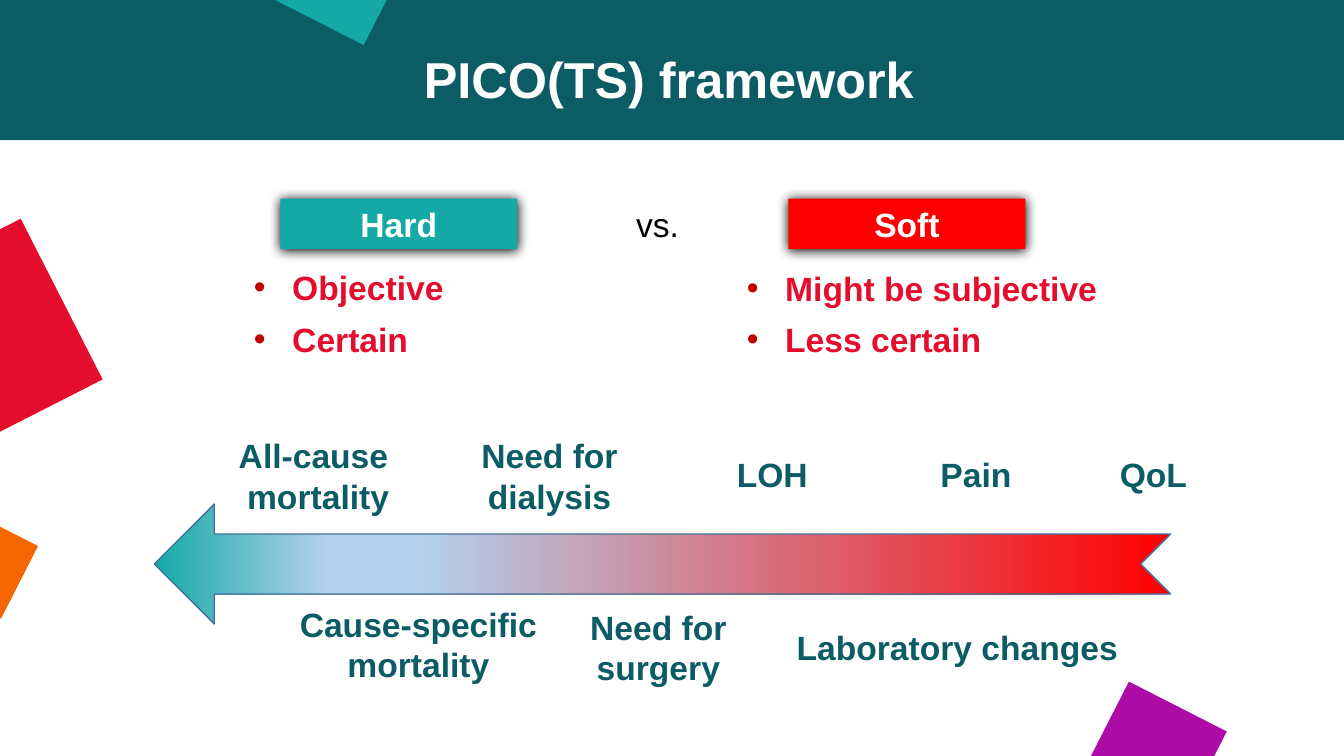
"""Build the PICO(TS) framework slide comparing hard and soft outcomes."""
from lxml import etree
from pptx import Presentation
from pptx.dml.color import RGBColor
from pptx.enum.shapes import MSO_SHAPE
from pptx.enum.text import MSO_ANCHOR, PP_ALIGN
from pptx.oxml.ns import qn
from pptx.util import Inches, Pt

RECT, ARROW = MSO_SHAPE.RECTANGLE, MSO_SHAPE.NOTCHED_RIGHT_ARROW
LEFT, CENTER = PP_ALIGN.LEFT, PP_ALIGN.CENTER
MIDDLE = MSO_ANCHOR.MIDDLE
DARK, TEAL, CRIMSON, RED, WHITE = "0C5C65", "15A9A6", "E50D2E", "FF0000", "FFFFFF"


def rgb(color):
    return RGBColor.from_string(color)


def write(s, text, color, size=24, bold=True, align=CENTER, bullet=False):
    tf = s.text_frame
    tf.word_wrap = True
    tf.text = text
    p = tf.paragraphs[0]
    p.alignment = align
    if bullet:
        pPr = p._p.get_or_add_pPr()
        pPr.set("marL", str(Inches(0.38)))
        pPr.set("indent", str(-Inches(0.38)))
        buClr = etree.SubElement(pPr, qn("a:buClr"))
        etree.SubElement(buClr, qn("a:srgbClr"), val="C00000")
        etree.SubElement(pPr, qn("a:buFont"), typeface="Arial")
        etree.SubElement(pPr, qn("a:buChar"), char="•")
    for r in p.runs:
        r.font.name, r.font.size, r.font.bold = "Arial", Pt(size), bold
        r.font.color.rgb = rgb(color)
    return p


prs = Presentation()
prs.slide_width, prs.slide_height = Inches(13.33), Inches(7.5)
slide = prs.slides.add_slide(prs.slide_layouts[6])
shapes = slide.shapes

decorations = [
    (0, 0, 13.33, 1.39, 0, DARK),
    (-1.09, 2.48, 1.8, 1.79, 333, CRIMSON),
    (10.89, 6.95, 1.09, 1.09, 27, "AD0DA6"),
    (-0.61, 5.18, 0.85, 0.81, 27, "F56600"),
    (2.91, -0.73, 0.98, 1.01, 27, TEAL),
]
for x, y, w, h, angle, color in decorations:
    s = shapes.add_shape(RECT, Inches(x), Inches(y), Inches(w), Inches(h))
    s.rotation = angle
    s.shadow.inherit = False
    s.fill.solid()
    s.fill.fore_color.rgb = rgb(color)
    s.line.fill.background()

title = shapes.add_textbox(Inches(2.99), Inches(0.5), Inches(7.29), Inches(0.41))
write(title, "PICO(TS) framework", WHITE, size=36).line_spacing = 0.9

for x, text, color in [(2.78, "Hard", TEAL), (7.82, "Soft", RED)]:
    s = shapes.add_shape(RECT, Inches(x), Inches(1.97), Inches(2.35), Inches(0.5))
    s.shadow.inherit = False
    s.fill.solid()
    s.fill.fore_color.rgb = rgb(color)
    s.line.fill.background()
    effects = s._element.spPr.find(qn("a:effectLst"))
    shadow = etree.SubElement(effects, qn("a:outerShdw"), blurRad=str(Pt(8.5)),
                              dist=str(Pt(1)), dir="5400000", rotWithShape="0")
    etree.SubElement(shadow, qn("a:srgbClr"), val="000000")
    s.text_frame.vertical_anchor = MIDDLE
    write(s, text, WHITE)

versus = shapes.add_textbox(Inches(6.21), Inches(1.97), Inches(0.65), Inches(0.5))
write(versus, "vs.", "000000", bold=False, align=LEFT)

traits = [
    (2.42, 2.6, 3.19, "Objective"),
    (7.31, 2.61, 5.57, "Might be subjective"),
    (2.42, 3.11, 2.68, "Certain"),
    (7.31, 3.11, 4, "Less certain"),
]
for x, y, w, text in traits:
    s = shapes.add_textbox(Inches(x), Inches(y), Inches(w), Inches(0.5))
    write(s, text, CRIMSON, align=LEFT, bullet=True)

arrow = shapes.add_shape(ARROW, Inches(1.53), Inches(5), Inches(10.08), Inches(1.19))
arrow.rotation = 180
arrow.shadow.inherit = False
arrow.line.color.rgb = rgb("42719B")
arrow.line.width = Pt(1)
arrow.fill.gradient()
arrow.fill.gradient_angle = 0
stops = arrow._element.spPr.find(qn("a:gradFill")).find(qn("a:gsLst"))
for stop in list(stops):
    stops.remove(stop)
for percent, color in [(0, RED), (74, "B3D1EC"), (83, "B3D1EC"), (100, TEAL)]:
    stop = etree.SubElement(stops, qn("a:gs"), pos=str(percent * 1000))
    etree.SubElement(stop, qn("a:srgbClr"), val=color)

outcomes = [
    (1.95, 4.27, 2.41, 0.91, "All-cause \vmortality"),
    (4.38, 4.27, 2.14, 0.91, "Need for\vdialysis"),
    (7.02, 4.45, 1.28, 0.5, "LOH"),
    (9.05, 4.45, 1.26, 0.5, "Pain"),
    (10.84, 4.45, 1.2, 0.5, "QoL"),
    (2.42, 5.94, 3.46, 0.91, "Cause-specific\vmortality"),
    (5.46, 5.97, 2.14, 0.91, "Need for\vsurgery"),
    (7.21, 6.17, 4.57, 0.5, "Laboratory changes"),
]
for x, y, w, h, text in outcomes:
    s = shapes.add_textbox(Inches(x), Inches(y), Inches(w), Inches(h))
    write(s, text, DARK)

prs.save("out.pptx")
